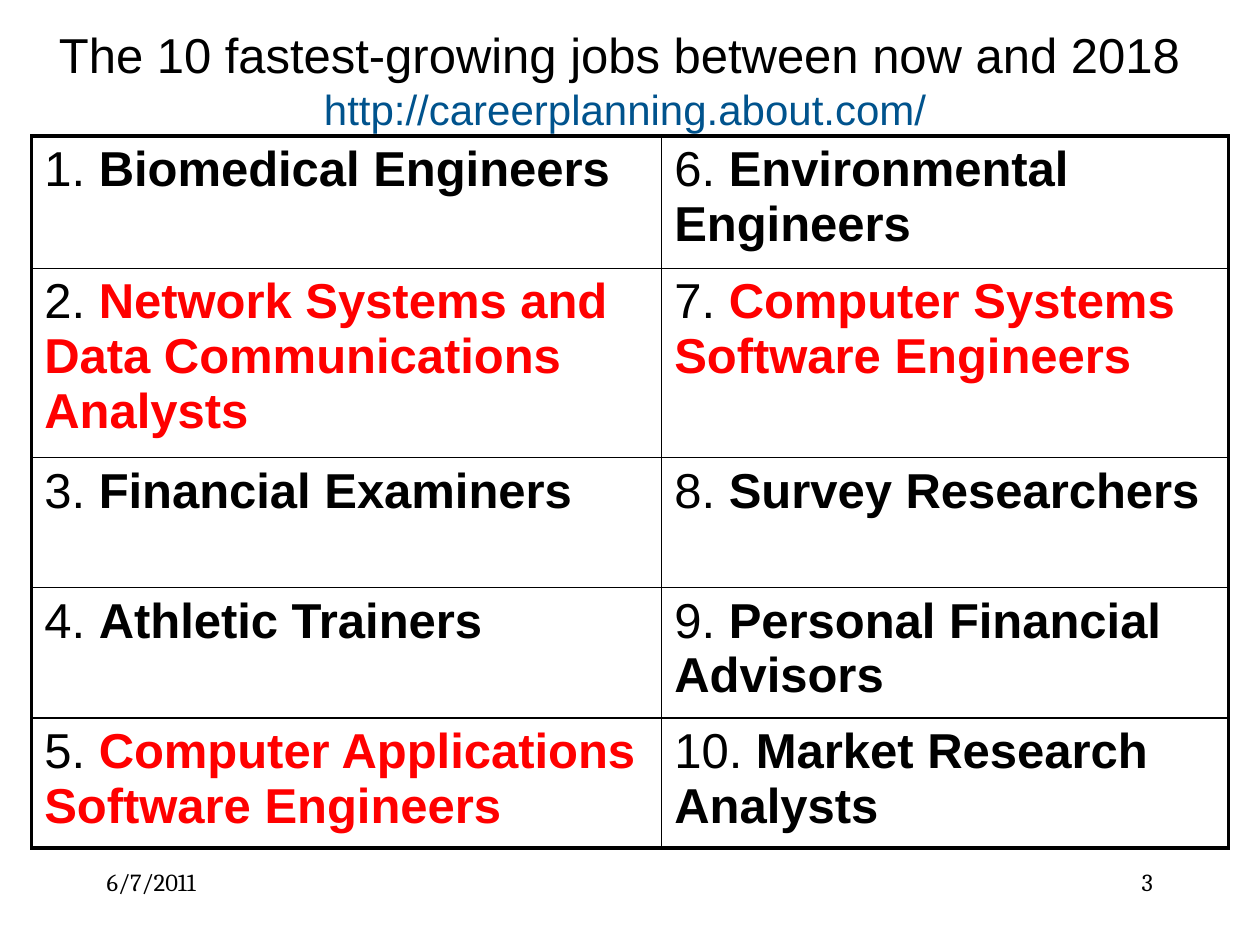
from lxml.etree import SubElement
from pptx import Presentation
from pptx.dml.color import RGBColor
from pptx.enum.text import MSO_ANCHOR as Anchor, PP_ALIGN as Align
from pptx.oxml.ns import qn
from pptx.util import Cm, Pt

BLACK = RGBColor(0, 0, 0)
RED = RGBColor(255, 0, 0)
BLUE = RGBColor(0, 0x53, 0x8D)
WHITE = RGBColor(255, 255, 255)


def add_run(para, text, size, color=BLACK, bold=False, face="Arial"):
    run = para.add_run()
    run.text = text
    font = run.font
    font.name, font.size, font.bold = face, Pt(size), bold
    font.color.rgb = color


def add_box(left, top, width, height, align, anchor=Anchor.TOP):
    box = slide.shapes.add_textbox(Cm(left), Cm(top), Cm(width), Cm(height))
    frame = box.text_frame
    frame.word_wrap = True
    frame.vertical_anchor = anchor
    para = frame.paragraphs[0]
    para.alignment = align
    return para


deck = Presentation()
deck.slide_width, deck.slide_height = Cm(25.4), Cm(19.05)
slide = deck.slides.add_slide(deck.slide_layouts[6])

# Title with the web address below
para = add_box(0.84, 0.43, 23.29, 2.34, Align.CENTER, Anchor.MIDDLE)
add_run(para, "The 10 fastest-growing jobs between now and 2018", 28)
para.add_line_break()
add_run(para, " http://careerplanning.about.com/", 24, BLUE)

# Jobs, numbered down each column; the computing ones are red
jobs = [
    "Biomedical Engineers",
    "Network Systems and Data Communications Analysts",
    "Financial Examiners",
    "Athletic Trainers",
    "Computer Applications Software Engineers",
    "Environmental Engineers",
    "Computer Systems Software Engineers",
    "Survey Researchers",
    "Personal Financial Advisors",
    "Market Research Analysts",
]
hot = {2, 5, 7}
widths = [12.7, 11.43]
heights = [2.67, 3.73, 2.62, 2.57, 2.57]
rows, cols = len(heights), len(widths)

table = slide.shapes.add_table(rows, cols, Cm(0.64), Cm(2.74),
                               Cm(sum(widths)), Cm(sum(heights))).table
table.first_row = table.horz_banding = False
for col, width in zip(table.columns, widths):
    col.width = Cm(width)
for row, height in zip(table.rows, heights):
    row.height = Cm(height)

for i, job in enumerate(jobs):
    c, r = divmod(i, rows)
    cell = table.cell(r, c)
    para = cell.text_frame.paragraphs[0]
    add_run(para, f"{i + 1}. ", 28)
    add_run(para, job, 28, RED if i + 1 in hot else BLACK, True)

    # Thick lines around the table, thin ones inside
    props = cell._tc.get_or_add_tcPr()
    edges = {"lnL": c == 0, "lnR": c == cols - 1,
             "lnT": r == 0, "lnB": r == rows - 1}
    for tag, outer in edges.items():
        line = SubElement(props, qn(f"a:{tag}"), w=str(Pt(2.25 if outer else 1)))
        fill = SubElement(line, qn("a:solidFill"))
        SubElement(fill, qn("a:srgbClr"), val=str(BLACK))
    cell.fill.solid()
    cell.fill.fore_color.rgb = WHITE

# Date and slide number
for left, text, align in [(1.9, "6/7/2011", Align.LEFT), (18.21, "3", Align.RIGHT)]:
    para = add_box(left, 17.35, 5.28, 1.27, align)
    add_run(para, text, 14, face="Cambria")

deck.save("out.pptx")
